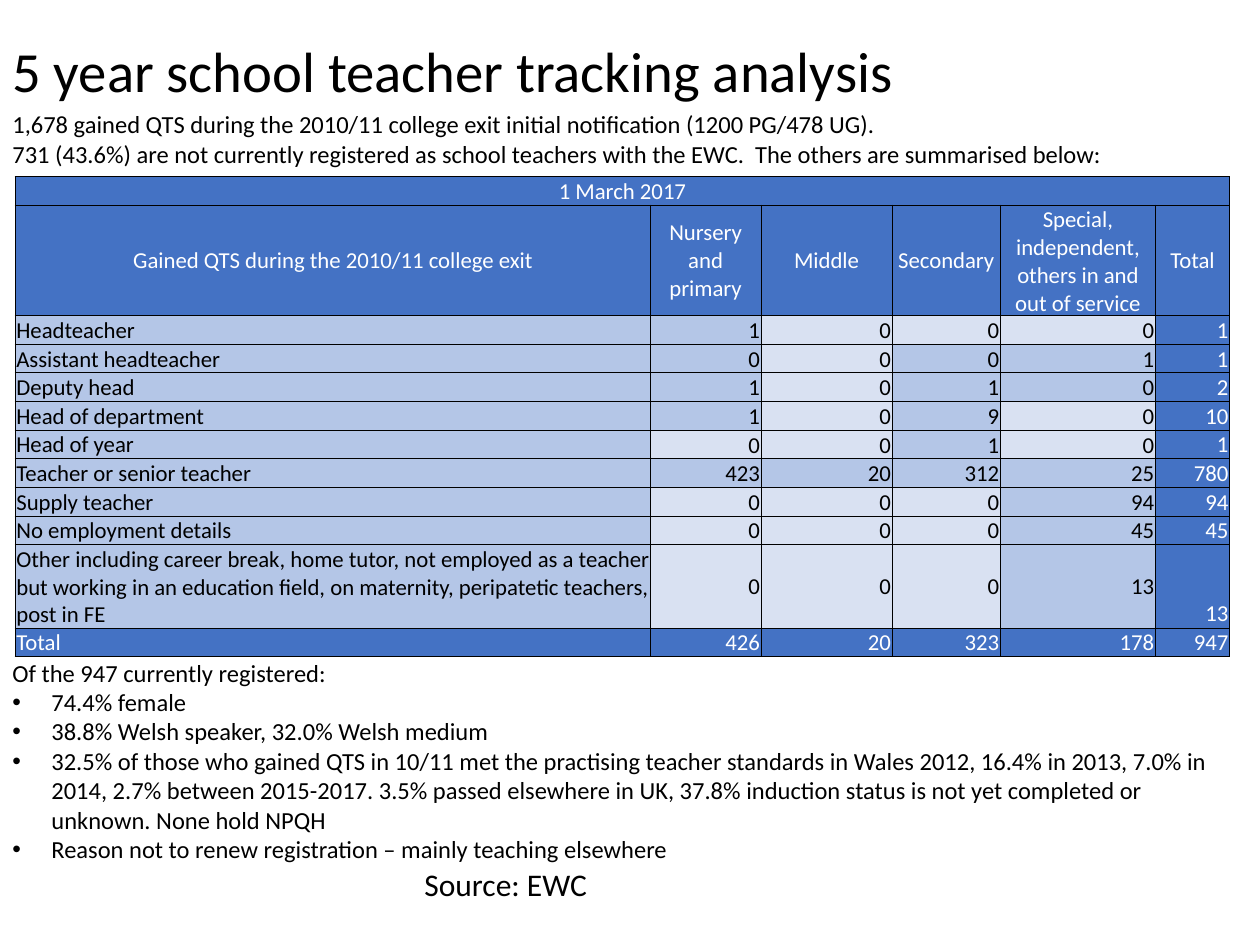
from dataclasses import dataclass

from lxml.etree import SubElement
from pptx import Presentation
from pptx.dml.color import RGBColor
from pptx.enum.text import MSO_ANCHOR as Anchor, PP_ALIGN as Align
from pptx.oxml.ns import qn
from pptx.util import Inches, Pt

BLACK, WHITE = "000000", "FFFFFF"
BLUE, MID, PALE = "4472C4", "B4C6E7", "D9E1F2"
TINTS = {"m": MID, "p": PALE}


@dataclass
class Row:
    """A job role, its counts by sector, its total and the tints of its counts."""
    role: str
    counts: tuple
    total: int
    tints: str


@dataclass
class Note:
    """A text box on the slide."""
    place: tuple
    lines: tuple
    size: float = 14
    bullets: bool = False
    anchor: Anchor = Anchor.TOP


HEADS = ("Gained QTS during the 2010/11 college exit", "Nursery and primary", "Middle",
         "Secondary", "Special, independent, others in and out of service", "Total")
ROWS = (
    Row("Headteacher", (1, 0, 0, 0), 1, "mppp"),
    Row("Assistant headteacher", (0, 0, 0, 1), 1, "mpmm"),
    Row("Deputy head", (1, 0, 1, 0), 2, "mpmm"),
    Row("Head of department", (1, 0, 9, 0), 10, "mpmp"),
    Row("Head of year", (0, 0, 1, 0), 1, "ppmp"),
    Row("Teacher or senior teacher", (423, 20, 312, 25), 780, "mmmm"),
    Row("Supply teacher", (0, 0, 0, 94), 94, "pppm"),
    Row("No employment details", (0, 0, 0, 45), 45, "pppm"),
    Row("Other including career break, home tutor, not employed as a teacher but working "
        "in an education field, on maternity, peripatetic teachers, post in FE",
        (0, 0, 0, 13), 13, "pppm"),
)
SUMS = ("Total", 426, 20, 323, 178, 947)
WIDTHS = (5.04, 0.88, 1.04, 0.86, 1.23, 0.59)
HEIGHTS = (0.21, 0.87, 0.22, *[0.21] * 7, 0.58, 0.21)
NOTES = (
    Note((0, 0.2, 7.64, 0.71), ("5 year school teacher tracking analysis",), 32.4,
         anchor=Anchor.MIDDLE),
    Note((0, 5.17, 10, 1.99), (
        "Of the 947 currently registered:",
        "74.4% female",
        "38.8% Welsh speaker, 32.0% Welsh medium",
        "32.5% of those who gained QTS in 10/11 met the practising teacher standards in "
        "Wales 2012, 16.4% in 2013, 7.0% in 2014, 2.7% between 2015-2017. 3.5% passed "
        "elsewhere in UK, 37.8% induction status is not yet completed or unknown. "
        "None hold NPQH",
        "Reason not to renew registration – mainly teaching elsewhere"), bullets=True),
    Note((0, 0.82, 9.76, 0.57), (
        "1,678 gained QTS during the 2010/11 college exit initial notification "
        "(1200 PG/478 UG).",
        "731 (43.6%) are not currently registered as school teachers with the EWC.  "
        "The others are summarised below:")),
    Note((3.27, 6.82, 2.36, 0.4), ("Source: EWC",), 18),
)


def paint(target, color: str) -> None:
    target.solid()
    target.fore_color.rgb = RGBColor.from_string(color)


def write(para, text: str, size: float = 13, color: str = BLACK, align=Align.LEFT,
          bullet: bool = False) -> None:
    if bullet:
        props = para._p.get_or_add_pPr()
        props.set("marL", str(Inches(0.31)))
        props.set("indent", str(-Inches(0.31)))
        SubElement(props, qn("a:buFont"), typeface="Arial")
        SubElement(props, qn("a:buChar"), char="•")
    para.alignment = align
    run = para.add_run()
    run.text = text
    run.font.name = "Calibri"
    run.font.size = Pt(size)
    paint(run.font.fill, color)


def add_note(slide, note: Note) -> None:
    frame = slide.shapes.add_textbox(*map(Inches, note.place)).text_frame
    frame.word_wrap = True
    frame.vertical_anchor = note.anchor
    for i, line in enumerate(note.lines):
        para = frame.add_paragraph() if i else frame.paragraphs[0]
        write(para, line, note.size, bullet=note.bullets and i > 0)


def edge(cell) -> None:
    props = cell._tc.get_or_add_tcPr()
    for side in "LRTB":
        line = SubElement(props, qn(f"a:ln{side}"), w=str(Pt(0.5)))
        fill = SubElement(line, qn("a:solidFill"))
        SubElement(fill, qn("a:srgbClr"), val=BLACK)


def fill_cell(cell, text, fill: str = BLUE, align=Align.RIGHT, anchor=Anchor.BOTTOM) -> None:
    cell.margin_left = cell.margin_right = cell.margin_top = Inches(0.01)
    cell.margin_bottom = 0
    cell.vertical_anchor = anchor
    paint(cell.fill, fill)
    write(cell.text_frame.paragraphs[0], str(text), align=align,
          color=WHITE if fill == BLUE else BLACK)


def add_grid(slide) -> None:
    place = map(Inches, (0.12, 1.4, sum(WIDTHS), sum(HEIGHTS)))
    grid = slide.shapes.add_table(len(HEIGHTS), len(WIDTHS), *place).table
    for col, width in zip(grid.columns, WIDTHS):
        col.width = Inches(width)
    for row, height in zip(grid.rows, HEIGHTS):
        row.height = Inches(height)
    for cell in grid.iter_cells():
        edge(cell)
    grid.cell(0, 0).merge(grid.cell(0, len(WIDTHS) - 1))
    fill_cell(grid.cell(0, 0), "1 March 2017", align=Align.CENTER)
    for c, head in enumerate(HEADS):
        fill_cell(grid.cell(1, c), head, align=Align.CENTER, anchor=Anchor.MIDDLE)
    for r, row in enumerate(ROWS, 2):
        fill_cell(grid.cell(r, 0), row.role, MID, Align.LEFT)
        for c, (count, tint) in enumerate(zip(row.counts, row.tints), 1):
            fill_cell(grid.cell(r, c), count, TINTS[tint], anchor=Anchor.MIDDLE)
        fill_cell(grid.cell(r, len(WIDTHS) - 1), row.total)
    for c, value in enumerate(SUMS):
        fill_cell(grid.cell(len(HEIGHTS) - 1, c), value, align=Align.RIGHT if c else Align.LEFT)


def main() -> None:
    """Build the teacher tracking slide."""
    deck = Presentation()
    deck.slide_width, deck.slide_height = Inches(10), Inches(7.5)
    slide = deck.slides.add_slide(deck.slide_layouts[6])
    *texts, source = NOTES
    for note in texts:
        add_note(slide, note)
    add_grid(slide)
    add_note(slide, source)
    deck.save("out.pptx")


if __name__ == "__main__":
    main()
